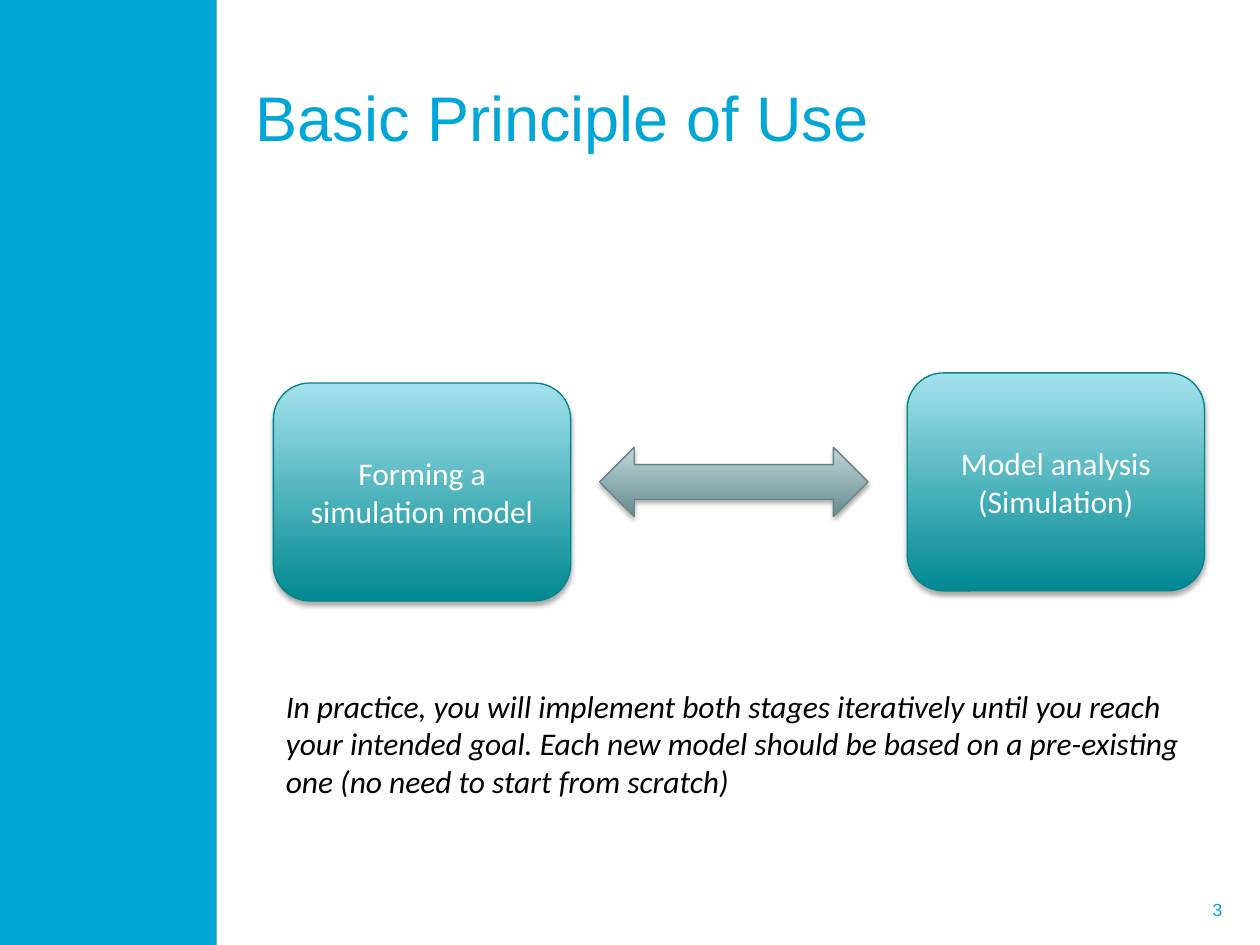
from lxml import etree
from pptx import Presentation
from pptx.dml.color import RGBColor
from pptx.enum.shapes import MSO_SHAPE
from pptx.enum.text import MSO_ANCHOR, PP_ALIGN
from pptx.oxml.ns import qn
from pptx.util import Inches, Pt

RECT = MSO_SHAPE.RECTANGLE
ROUND = MSO_SHAPE.ROUNDED_RECTANGLE
ARROW = MSO_SHAPE.LEFT_RIGHT_ARROW
TOP, MIDDLE = MSO_ANCHOR.TOP, MSO_ANCHOR.MIDDLE
LEFT, CENTER, RIGHT = PP_ALIGN.LEFT, PP_ALIGN.CENTER, PP_ALIGN.RIGHT

BLUE, WHITE, BLACK = "00A6D6", "FFFFFF", "000000"
TEAL = ("008891", "A3E2EC", "00858E")
GRAY = ("678A8D", "BED6D9", "688487")


def color(code):
    return RGBColor.from_string(code)


class Deck:
    head = {"name": "Arial", "size": Pt(36), "bold": False}
    foot = {"name": "Arial", "size": Pt(10)}
    body = {"name": "Calibri", "size": Pt(18)}
    note = {**body, "italic": True}

    def __init__(self):
        self.deck = Presentation()
        self.deck.slide_width = Inches(10)
        self.deck.slide_height = Inches(7.5)
        self.slide = self.deck.slides.add_slide(self.deck.slide_layouts[5])

    def label(self, shape, lines, font, tint, align=LEFT, anchor=MIDDLE):
        frame = shape.text_frame
        frame.word_wrap = True
        frame.vertical_anchor = anchor
        frame.text = "\n".join(lines)
        for para in frame.paragraphs:
            para.alignment = align
            for key, value in font.items():
                setattr(para.font, key, value)
            para.font.color.rgb = color(tint)

    def title(self, box, text):
        shape = self.slide.shapes.title
        shape.left, shape.top, shape.width, shape.height = map(Inches, box)
        self.label(shape, [text], self.head, BLUE)

    def text(self, box, text, font, tint, **place):
        shape = self.slide.shapes.add_textbox(*map(Inches, box))
        self.label(shape, [text], font, tint, **place)

    def shape(self, kind, box):
        shape = self.slide.shapes.add_shape(kind, *map(Inches, box))
        shape.shadow.inherit = False
        return shape

    def band(self, box):
        shape = self.shape(RECT, box)
        shape.fill.solid()
        shape.fill.fore_color.rgb = color(BLUE)
        shape.line.fill.background()

    def block(self, kind, box, tones, lines=()):
        shape = self.shape(kind, box)
        *stops, edge = tones
        shape.fill.gradient()
        shape.fill.gradient_angle = 90
        for stop, tone in zip(shape.fill.gradient_stops, stops):
            stop.color.rgb = color(tone)
        shape.line.color.rgb = color(edge)
        shape.line.width = Pt(0.75)
        self.shade(shape)
        if lines:
            self.label(shape, lines, self.body, WHITE, CENTER)

    def shade(self, shape):
        holder = shape._element.spPr.find(qn("a:effectLst"))
        outer = etree.SubElement(holder, qn("a:outerShdw"), {
            "blurRad": str(Pt(3.1)), "dist": str(Pt(1.8)),
            "dir": "5400000", "rotWithShape": "0"})
        tone = etree.SubElement(outer, qn("a:srgbClr"), val=BLACK)
        etree.SubElement(tone, qn("a:alpha"), val="35000")


def main():
    page = Deck()
    page.band((0, 0, 1.72, 7.5))
    page.text((7.27, 7.02, 2.53, 0.4), "3", page.foot, BLUE,
              align=RIGHT, anchor=MIDDLE)
    page.title((1.93, 0.3, 7.77, 1.25), "Basic Principle of Use")
    page.block(ROUND, (2.17, 3.04, 2.36, 1.73), TEAL,
               ["Forming a simulation model"])
    page.block(ARROW, (4.76, 3.55, 2.13, 0.55), GRAY)
    page.block(ROUND, (7.2, 2.96, 2.36, 1.73), TEAL,
               ["Model analysis", "(Simulation)"])
    page.text((2.17, 5.4, 7.56, 1.01),
              "In practice, you will implement both stages iteratively until "
              "you reach your intended goal. Each new model should be based on "
              "a pre-existing one (no need to start from scratch)",
              page.note, BLACK, anchor=TOP)
    page.deck.save("out.pptx")


if __name__ == "__main__":
    main()
